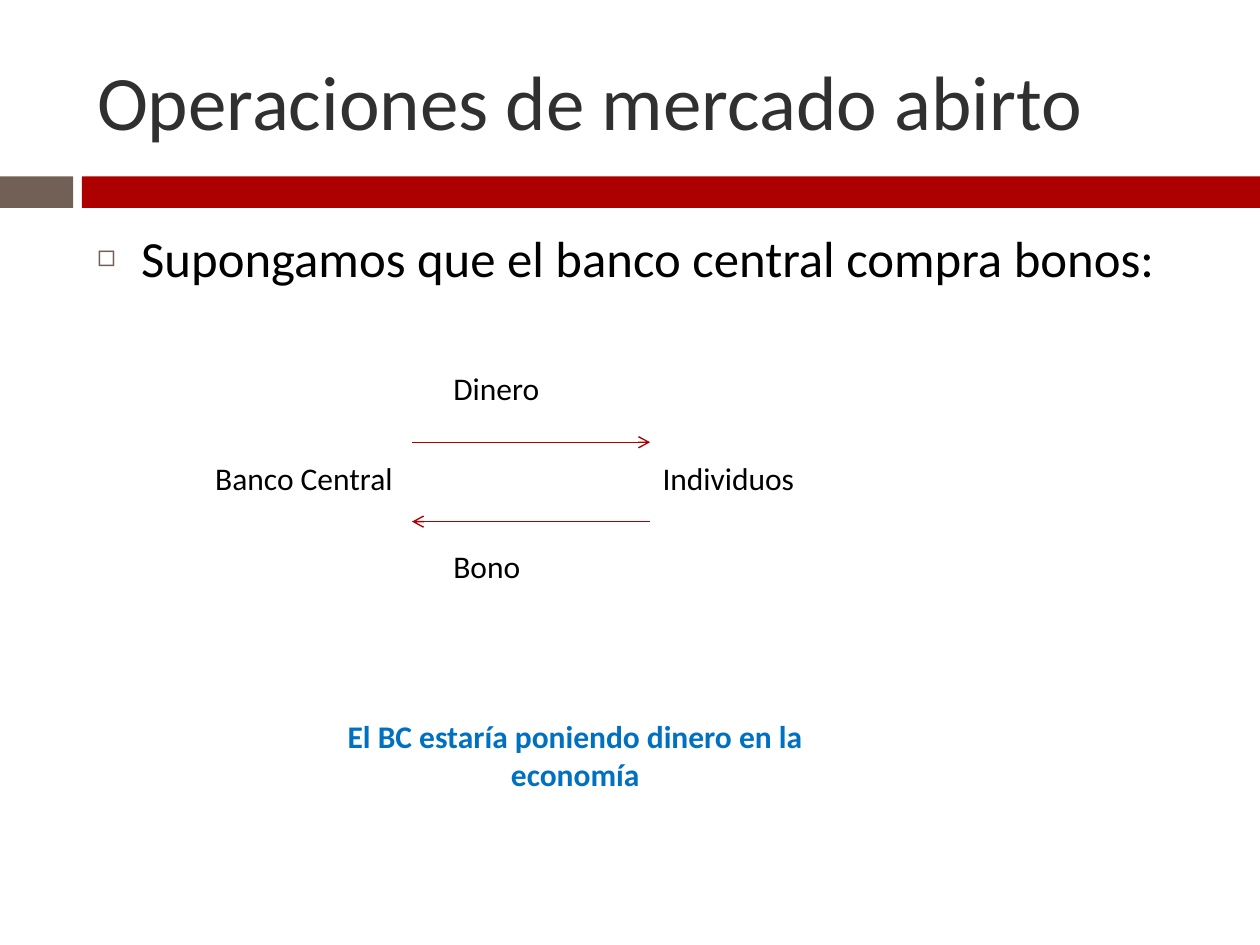
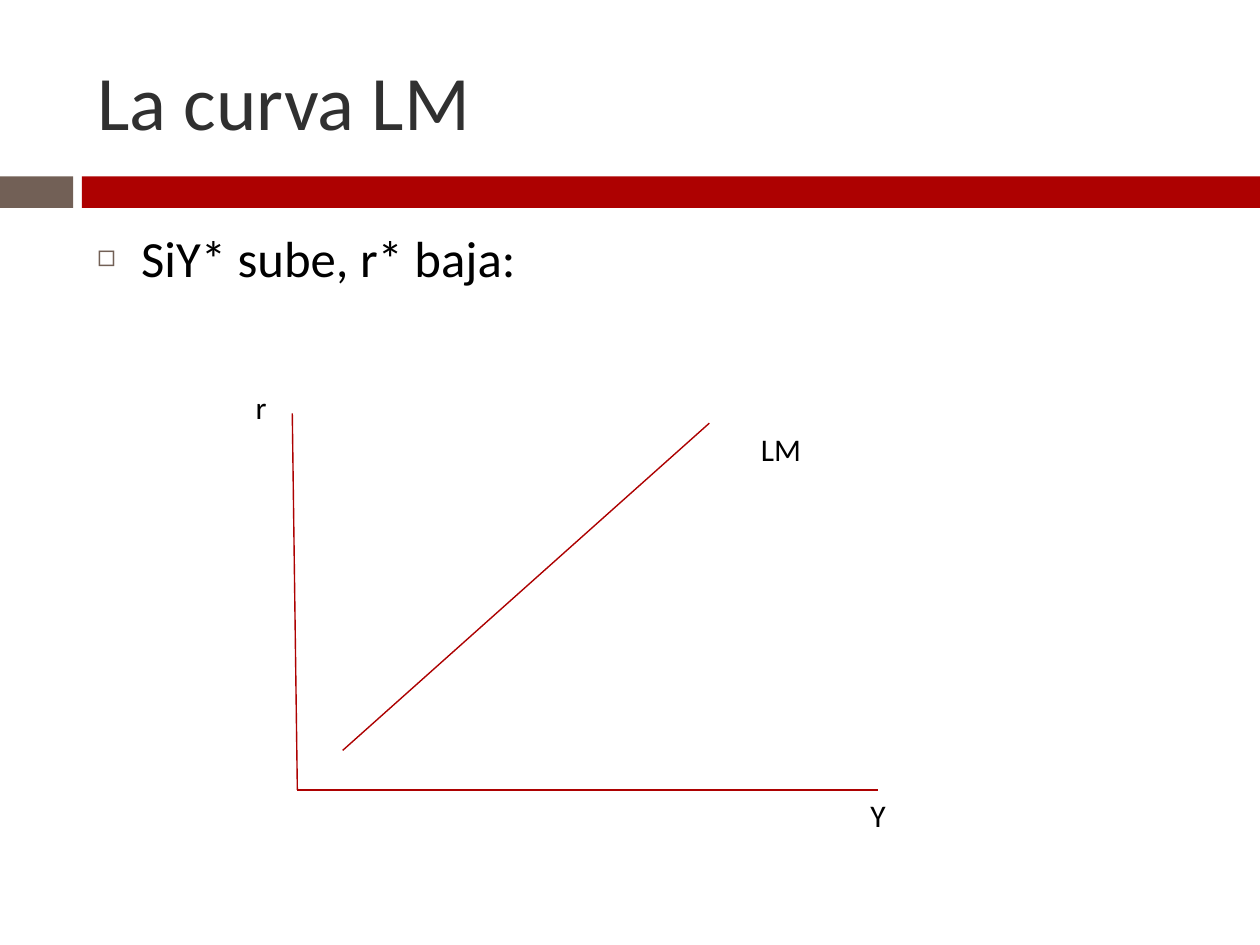
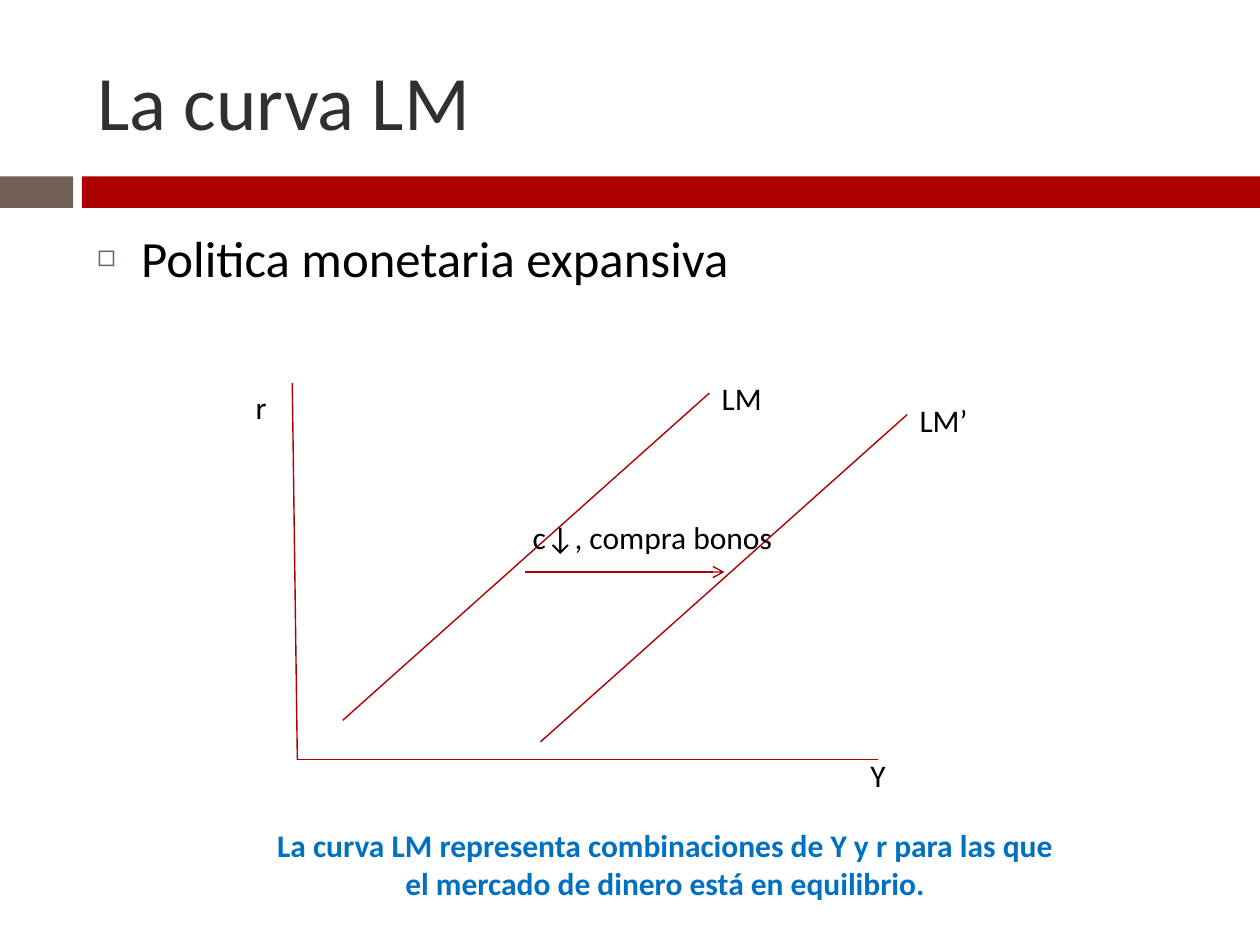
from lxml import etree
from pptx import Presentation
from pptx import util as u
from pptx.dml import color
from pptx.enum import shapes, text
from pptx.oxml import ns

RED = "AD0101"
TAUPE = "726056"
CHARCOAL = "303030"
BLACK = "000000"
BLUE = "0070C0"
FONT = "Calibri"


def rgb(value):
    """Return the colour for a hex string."""
    return color.RGBColor.from_string(value)


def add_child(parent, tag, **attributes):
    """Append a drawing element to a parent element."""
    return etree.SubElement(parent, ns.qn(f"a:{tag}"), attributes)


def write(shape, words, size=18, ink=BLACK, bold=False, align=text.PP_ALIGN.LEFT):
    """Fill a shape with one formatted paragraph and return the paragraph."""
    paragraph = shape.text_frame.paragraphs[0]
    paragraph.alignment = align
    run = paragraph.add_run()
    run.text = words
    run.font.name = FONT
    run.font.size = u.Pt(size)
    run.font.bold = bold
    run.font.color.rgb = rgb(ink)
    return paragraph


def place(shape, left, top, width, height):
    """Move and size a shape in points."""
    shape.left, shape.top = u.Pt(left), u.Pt(top)
    shape.width, shape.height = u.Pt(width), u.Pt(height)


class Deck:
    """Hold the shared style and the slide being built."""

    def __init__(self):
        """Set the slide size and the places of title and body."""
        self.presentation = Presentation()
        self.presentation.slide_width = u.Pt(720)
        self.presentation.slide_height = u.Pt(540)
        self.layout = self.presentation.slide_layouts[1]
        title, body = list(self.layout.placeholders)[:2]
        place(title, 48.24, 18, 642.24, 77.76)
        place(body, 48.24, 126, 642.24, 354.24)
        self.slide = None

    def start_slide(self, title, statement):
        """Add a slide with its bands, title and bulleted statement."""
        self.slide = self.presentation.slides.add_slide(self.layout)
        self.band(0, 41.76, TAUPE)
        self.band(46.8, 673.2, RED)
        heading, body = self.slide.placeholders
        heading.text_frame.vertical_anchor = text.MSO_ANCHOR.MIDDLE
        write(heading, title, size=44, ink=CHARCOAL)
        self.bullet(body, statement)
        for placeholder in (heading, body):
            placeholder.text_frame.auto_size = text.MSO_AUTO_SIZE.NONE

    def band(self, left, width, fill):
        """Draw one part of the band below the title."""
        shape = self.slide.shapes.add_shape(
            shapes.MSO_SHAPE.RECTANGLE, u.Pt(left), u.Pt(100.8), u.Pt(width), u.Pt(18))
        shape.shadow.inherit = False
        shape.fill.solid()
        shape.fill.fore_color.rgb = rgb(fill)
        shape.line.fill.background()

    def bullet(self, body, words):
        """Write a statement with a hollow square bullet."""
        paragraph = write(body, words, size=29)
        paragraph.space_before = u.Pt(7)
        properties = paragraph._p.get_or_add_pPr()
        properties.set("marL", str(u.Pt(25.2)))
        properties.set("indent", str(u.Pt(-25.2)))
        add_child(add_child(properties, "buClr"), "srgbClr", val=TAUPE)
        add_child(properties, "buSzPct", val="60000")
        add_child(properties, "buChar", char="◻")

    def label(self, words, left, top, width, height=29, **style):
        """Add a wrapped text box."""
        box = self.slide.shapes.add_textbox(
            u.Pt(left), u.Pt(top), u.Pt(width), u.Pt(height))
        box.text_frame.word_wrap = True
        box.text_frame.auto_size = text.MSO_AUTO_SIZE.SHAPE_TO_FIT_TEXT
        write(box, words, **style)

    def conclusion(self, words, left, top, width):
        """Add a two-line closing remark in bold blue."""
        self.label(words, left, top, width, height=51, ink=BLUE, bold=True,
                   align=text.PP_ALIGN.CENTER)

    def line(self, start, end, arrow=False):
        """Draw a thin red line, with an arrowhead at its end if asked."""
        connector = self.slide.shapes.add_connector(
            shapes.MSO_CONNECTOR.STRAIGHT, *map(u.Pt, (*start, *end)))
        connector.line.color.rgb = rgb(RED)
        connector.line.width = u.Pt(0.79)
        properties = connector.element.spPr
        if arrow:
            add_child(properties.find(ns.qn("a:ln")), "tailEnd", type="arrow")
        add_child(properties, "effectLst")

    def axes(self, top, y_label_top):
        """Draw the r and Y axes with their labels."""
        origin = (169.92, top + 215.28)
        self.line((167.04, top), origin)
        self.line(origin, (501.84, origin[1]))
        self.label("Y", 490.32, y_label_top, 67.68)
        self.label("r", 138.96, 218.16, 67.68)

    def curve(self, left, bottom, name, label_left, label_top):
        """Draw a rising curve and its name."""
        self.line((left, bottom), (left + 209.52, bottom - 187))
        self.label(name, label_left, label_top, 96.48)


def main():
    """Build and save the three slides."""
    deck = Deck()

    deck.start_slide("Operaciones de mercado abirto",
                     "Supongamos que el banco central compra bonos:")
    bank_side, public_side = 235.44, 371.52
    deck.label("Banco Central", 115.92, 258.48, 147.6)
    deck.label("Individuos", public_side, 258.48, 147.6)
    deck.line((bank_side, 252.72), (public_side, 252.72), arrow=True)
    deck.line((public_side, 298.08), (bank_side, 298.08), arrow=True)
    for flow, top in (("Dinero", 207.36), ("Bono", 308.88)):
        deck.label(flow, 252, top, 108)
    deck.conclusion("El BC estaría poniendo dinero en la economía", 161.28, 406.08, 334.8)

    deck.start_slide("La curva LM", "SiY* sube, r* baja:")
    deck.axes(236.16, y_label_top=451.44)
    deck.curve(195.84, 428.8, "LM", 427.68, 241.92)

    deck.start_slide("La curva LM", "Politica monetaria expansiva")
    deck.axes(218.88, y_label_top=428.4)
    deck.curve(195.84, 411.64, "LM", 405.36, 213.12)
    deck.conclusion("La curva LM representa combinaciones de Y y r para las que "
                    "el mercado de dinero está en equilibrio.", 144.72, 468.72, 470.88)
    deck.curve(308.88, 423.9, "LM’", 518.4, 225.36)
    deck.line((300.24, 326.88), (414, 326.88), arrow=True)
    deck.label("c↓, compra bonos", 297.36, 292.32, 158.4)

    deck.presentation.save("out.pptx")


if __name__ == "__main__":
    main()
